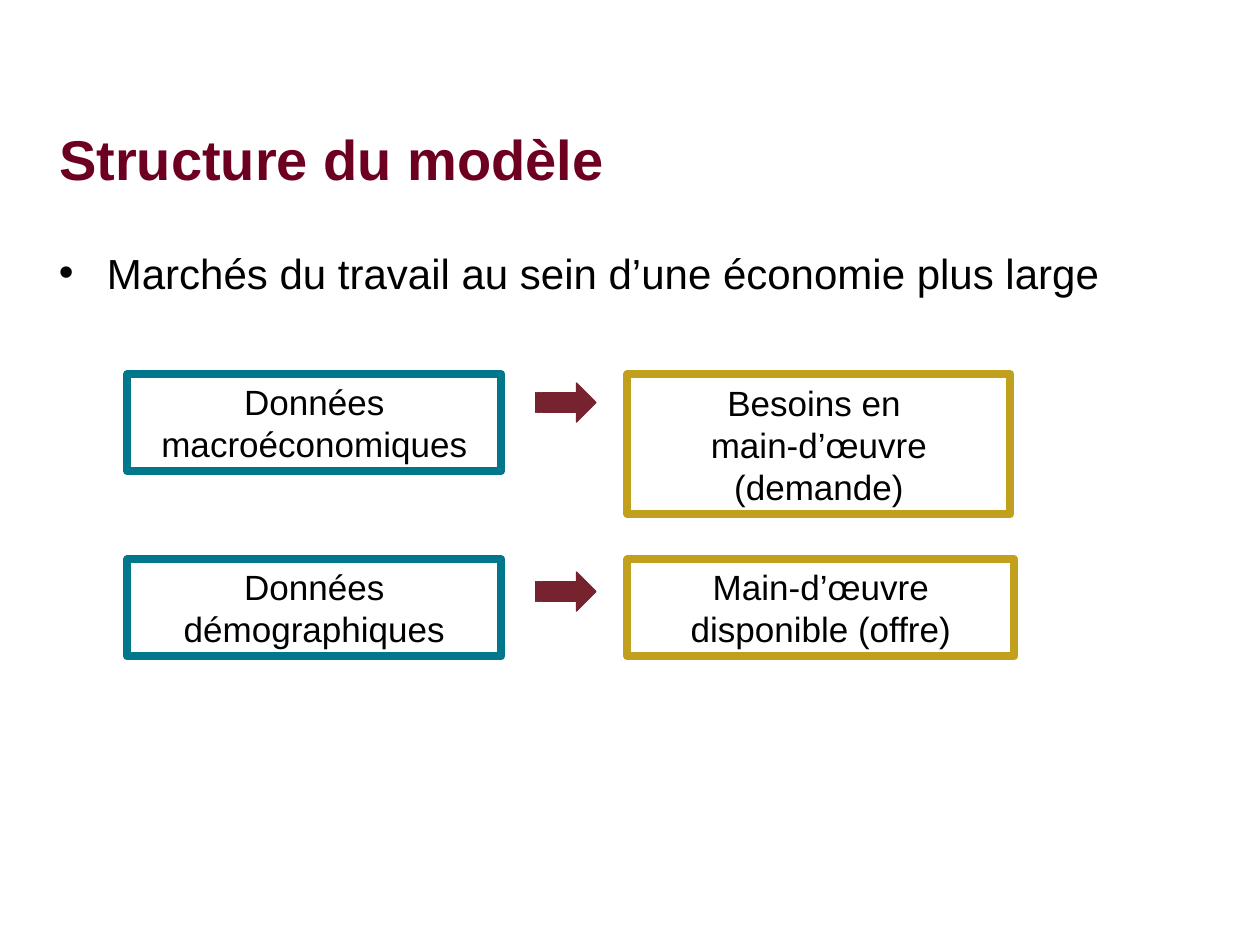
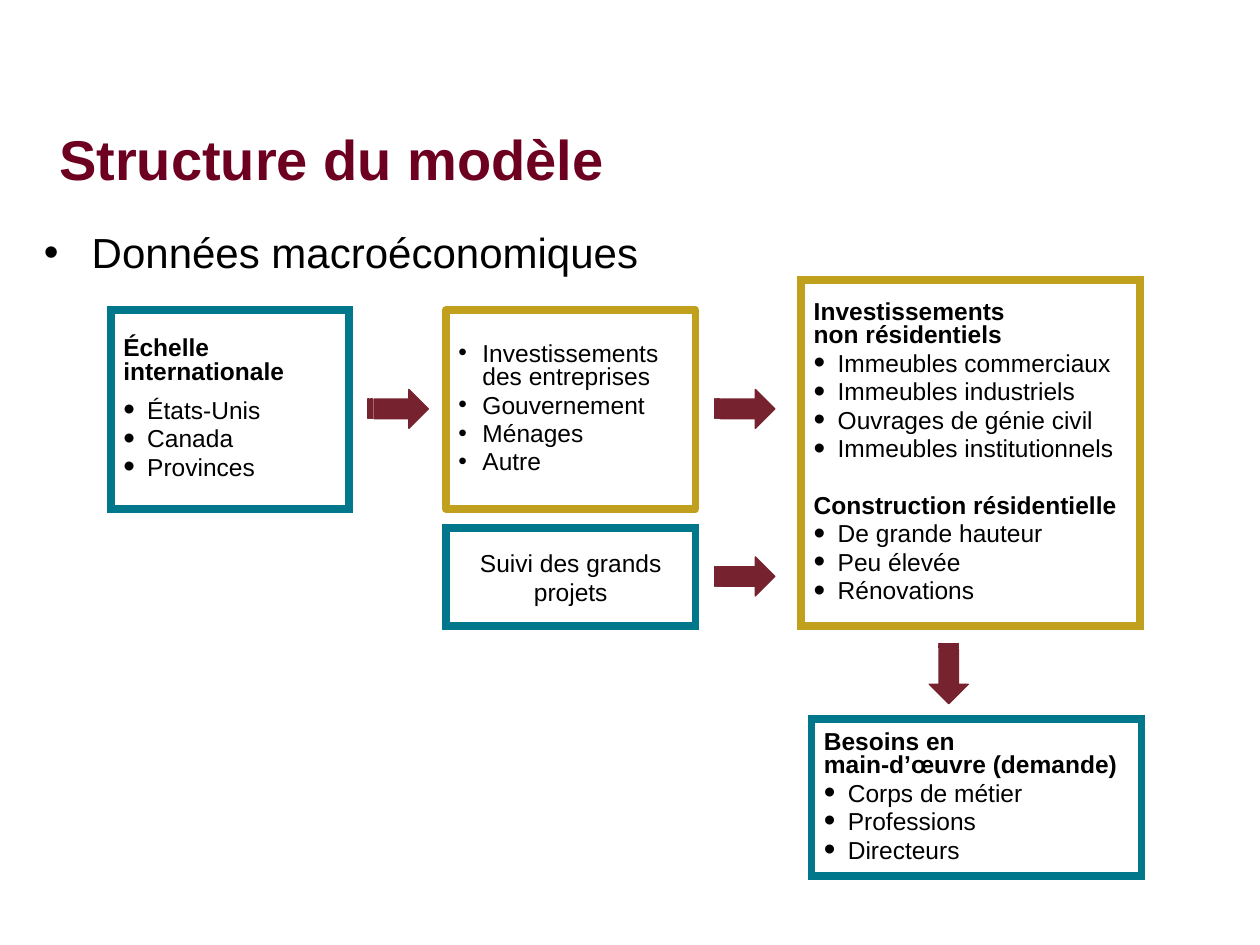
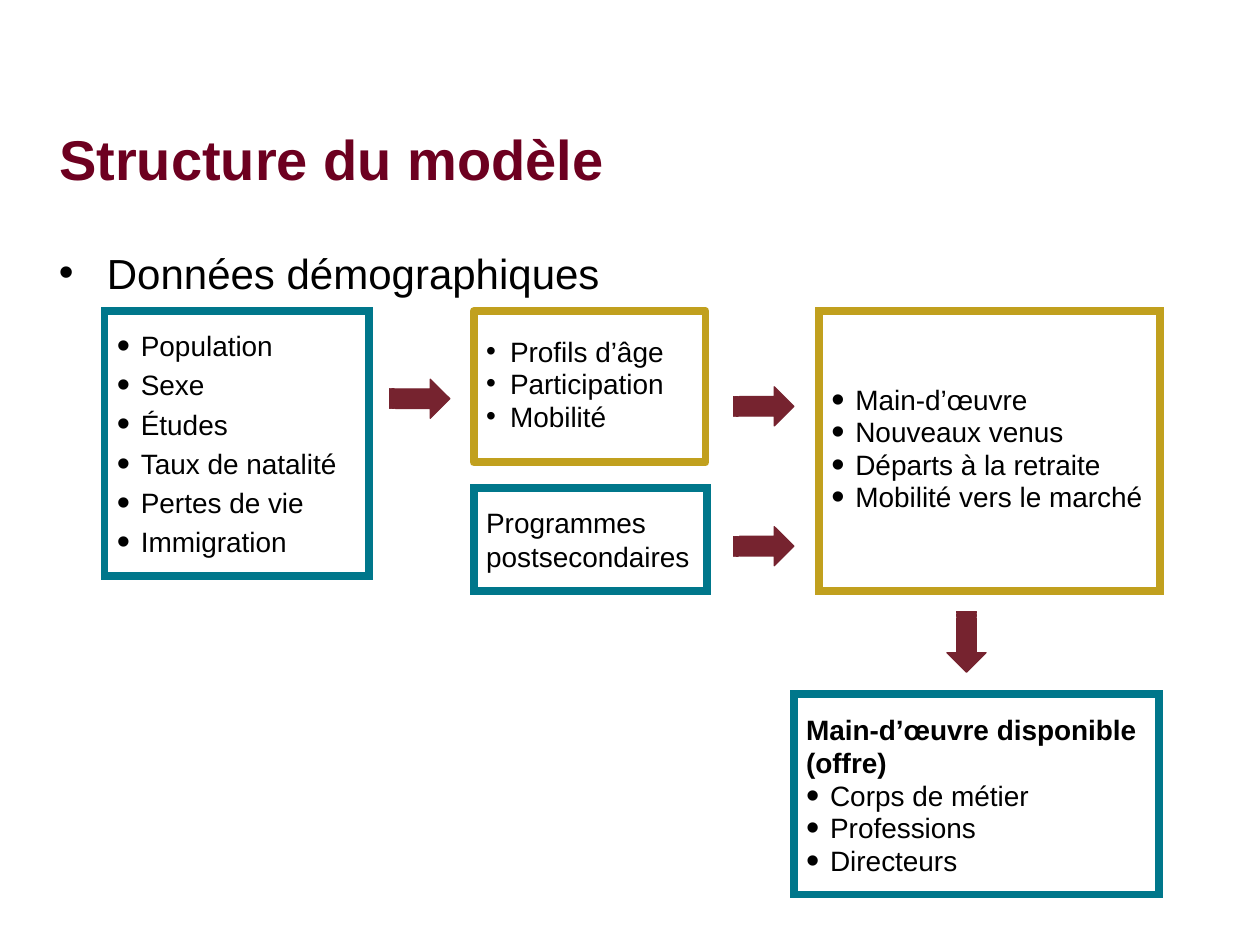
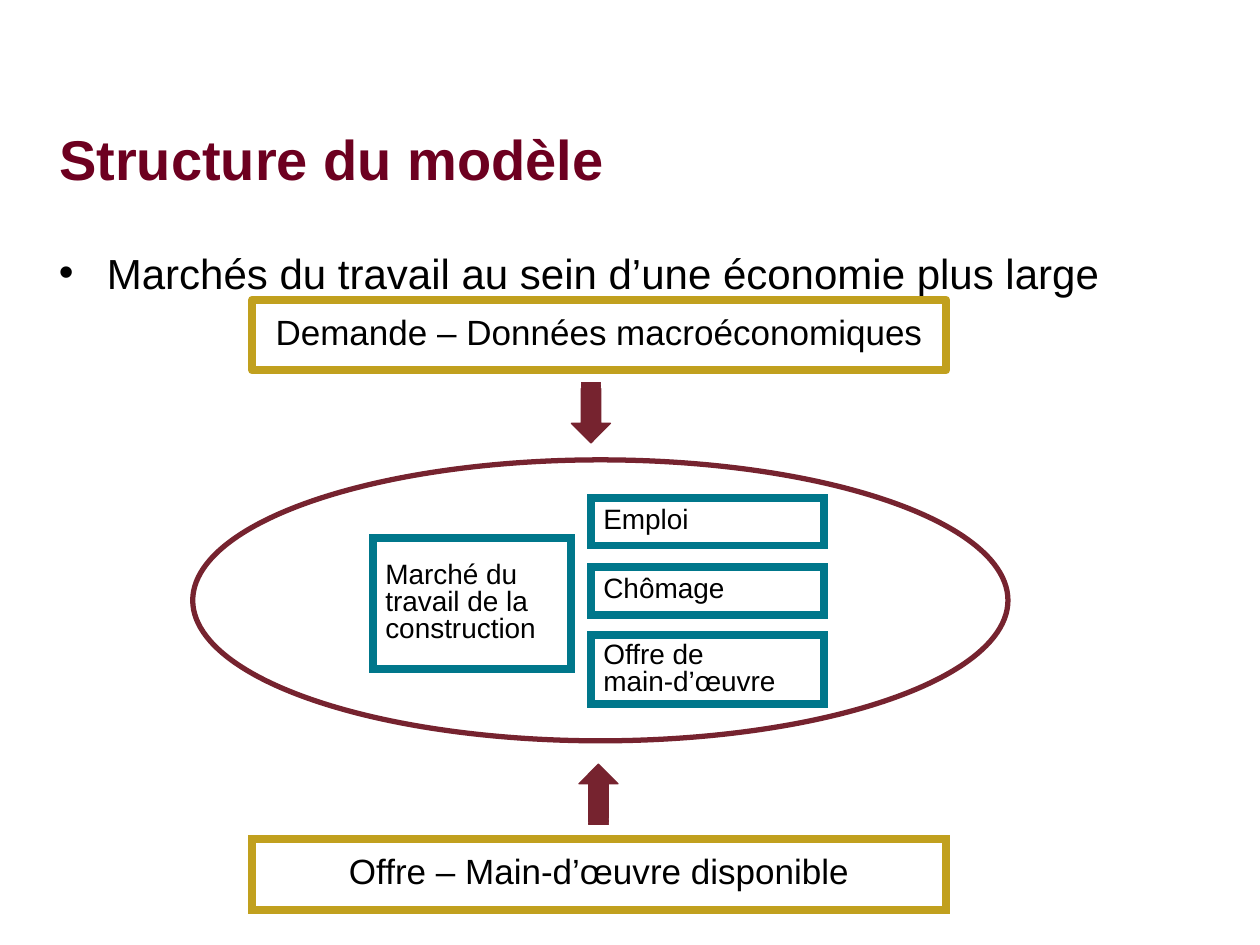
import dataclasses

import pptx
import pptx.dml.color
import pptx.enum.shapes
import pptx.enum.text
import pptx.oxml.ns
import pptx.util
from lxml import etree

Inches = pptx.util.Inches
Pt = pptx.util.Pt
Preset = pptx.enum.shapes.MSO_SHAPE
Align = pptx.enum.text.PP_ALIGN
Anchor = pptx.enum.text.MSO_ANCHOR

COLORS = {
    "title": "6D0020",
    "text": "000000",
    "teal": "00778B",
    "gold": "C1A01E",
    "maroon": "76232F",
    "white": "FFFFFF",
}
FONT = "Arial"
TITLE = "Structure du modèle"
ARROW_WIDTH, ARROW_HEIGHT = 0.48, 0.31
DOWN, UP = 90, 270
TIGHT = 0.8


@dataclasses.dataclass(frozen=True)
class Line:
    text: str
    bullet: int = 0
    bold: bool = False
    spacing: float = TIGHT
    before: float | None = None
    after: float = 0
    indent: float = 0.19


@dataclasses.dataclass(frozen=True)
class Box:
    left: float
    top: float
    width: float
    height: float
    color: str
    lines: list[Line]
    size: int
    centered: bool = False
    rounded: bool = False
    filled: bool = True


@dataclasses.dataclass(frozen=True)
class Arrow:
    left: float
    top: float
    rotation: int = 0


@dataclasses.dataclass(frozen=True)
class Ellipse:
    left: float
    top: float
    width: float
    height: float


@dataclasses.dataclass(frozen=True)
class Page:
    subtitle: str
    boxes: list[Box]
    arrows: list[Arrow]
    ellipses: list[Ellipse] = dataclasses.field(default_factory=list)
    subtitle_left: float = 0.37
    subtitle_top: float = 1.87


def rgb(name: str) -> pptx.dml.color.RGBColor:
    return pptx.dml.color.RGBColor.from_string(COLORS[name])


def bullets(*texts: str, percent: int = 135, spacing: float = TIGHT) -> list[Line]:
    return [Line(text, percent, spacing=spacing) for text in texts]


def add_bullet(paragraph, percent: int, indent: float) -> None:
    properties = paragraph._p.get_or_add_pPr()
    properties.set("marL", str(Inches(indent)))
    properties.set("indent", str(-Inches(indent)))
    for tag, key, value in (
        ("a:buSzPct", "val", str(percent * 1000)),
        ("a:buFont", "typeface", FONT),
        ("a:buChar", "char", "•"),
    ):
        etree.SubElement(properties, pptx.oxml.ns.qn(tag)).set(key, value)


def write_run(paragraph, text: str, size: int, color: str, bold: bool) -> None:
    run = paragraph.add_run()
    run.text = text
    run.font.name = FONT
    run.font.size = Pt(size)
    run.font.bold = bold
    run.font.color.rgb = rgb(color)


def write_lines(frame, lines: list[Line], size: int, align=Align.LEFT, color: str = "text") -> None:
    frame.word_wrap = True
    for index, line in enumerate(lines):
        paragraph = frame.add_paragraph() if index else frame.paragraphs[0]
        if line.bullet:
            add_bullet(paragraph, line.bullet, line.indent)
        paragraph.alignment = align
        paragraph.line_spacing = line.spacing
        before = 0.2 * size if line.before is None else line.before
        paragraph.space_before = Pt(before if index else 0)
        paragraph.space_after = Pt(line.after)
        for part_index, part in enumerate(line.text.split("\n")):
            if part_index:
                paragraph.add_line_break()
            write_run(paragraph, part, size, color, line.bold)


def add_outlined(slide, preset, item: Box | Ellipse, color: str, weight: float, filled: bool):
    shape = slide.shapes.add_shape(
        preset, Inches(item.left), Inches(item.top), Inches(item.width), Inches(item.height)
    )
    shape.shadow.inherit = False
    if filled:
        shape.fill.solid()
        shape.fill.fore_color.rgb = rgb("white")
    else:
        shape.fill.background()
    shape.line.color.rgb = rgb(color)
    shape.line.width = Pt(weight)
    return shape


def add_box(slide, box: Box) -> None:
    shape = add_outlined(slide, Preset.RECTANGLE, box, box.color, 4.5, box.filled)
    outline = shape.line._get_or_add_ln()
    if box.rounded:
        etree.SubElement(outline, pptx.oxml.ns.qn("a:round"))
    else:
        etree.SubElement(outline, pptx.oxml.ns.qn("a:miter")).set("lim", "800000")
    shape.text_frame.vertical_anchor = Anchor.MIDDLE
    write_lines(shape.text_frame, box.lines, box.size, Align.CENTER if box.centered else Align.LEFT)


def add_arrow(slide, arrow: Arrow) -> None:
    shape = slide.shapes.add_shape(
        Preset.STRIPED_RIGHT_ARROW,
        Inches(arrow.left), Inches(arrow.top), Inches(ARROW_WIDTH), Inches(ARROW_HEIGHT),
    )
    shape.shadow.inherit = False
    shape.fill.solid()
    shape.fill.fore_color.rgb = rgb("maroon")
    shape.line.color.rgb = rgb("maroon")
    shape.line.width = Pt(0.75)
    shape.rotation = arrow.rotation


def add_page(deck, page: Page) -> None:
    slide = deck.slides.add_slide(deck.slide_layouts[5])
    title = slide.shapes.title
    title.left, title.top = Inches(0.37), Inches(0.63)
    title.width, title.height = Inches(9), Inches(1.25)
    title.text_frame.vertical_anchor = Anchor.MIDDLE
    write_lines(title.text_frame, [Line(TITLE, bold=True, spacing=1)], 32, color="title")

    subtitle = slide.shapes.add_textbox(
        Inches(page.subtitle_left), Inches(page.subtitle_top), Inches(9), Inches(4.95)
    )
    subtitle.text_frame.margin_top = Inches(0.09)
    write_lines(subtitle.text_frame, [Line(page.subtitle, 100, spacing=1, indent=0.38)], 24)

    for ellipse in page.ellipses:
        add_outlined(slide, Preset.OVAL, ellipse, "maroon", 3, False)
    for box in page.boxes:
        add_box(slide, box)
    for arrow in page.arrows:
        add_arrow(slide, arrow)


def overview_box(left: float, top: float, width: float, height: float, color: str, *texts: str) -> Box:
    lines = [Line(text, spacing=1, before=0) for text in texts]
    return Box(left, top, width, height, color, lines, 20, centered=True, rounded=True, filled=False)


def market_box(left: float, top: float, width: float, height: float, text: str) -> Box:
    return Box(left, top, width, height, "teal", [Line(text)], 16)


def side_box(top: float, text: str, rounded: bool) -> Box:
    return Box(2, top, 5.51, 0.56, "gold", [Line(text)], 20, centered=True, rounded=rounded)


WIDER_ECONOMY = "Marchés du travail au sein d’une économie plus large"
WORKFORCE = bullets("Corps de métier", "Professions", "Directeurs")

OVERVIEW = Page(
    WIDER_ECONOMY,
    [
        overview_box(1.01, 2.97, 2.97, 0.77, "teal", "Données macroéconomiques"),
        overview_box(1.01, 4.44, 2.97, 0.77, "teal", "Données démographiques"),
        overview_box(4.98, 2.97, 3.04, 1.11, "gold", "Besoins en \nmain-d’œuvre", "(demande)"),
        overview_box(4.98, 4.44, 3.07, 0.77, "gold", "Main-d’œuvre disponible (offre)"),
    ],
    [Arrow(4.25, 3.04), Arrow(4.25, 4.54)],
)

MACROECONOMY = Page(
    "Données macroéconomiques",
    [
        Box(0.88, 2.46, 1.89, 1.58, "teal", [
            Line("Échelle internationale", bold=True, after=6),
            *bullets("États-Unis", "Canada", "Provinces"),
        ], 14),
        Box(3.54, 2.46, 1.98, 1.58, "gold", bullets(
            "Investissements des entreprises", "Gouvernement", "Ménages", "Autre", percent=100,
        ), 14, rounded=True),
        Box(6.36, 2.22, 2.69, 2.75, "gold", [
            Line("Investissements \nnon résidentiels", bold=True),
            *bullets(
                "Immeubles commerciaux", "Immeubles industriels",
                "Ouvrages de génie civil", "Immeubles institutionnels",
            ),
            Line("Construction résidentielle", bold=True, before=19),
            *bullets("De grande hauteur", "Peu élevée", "Rénovations"),
        ], 14),
        Box(3.54, 4.19, 1.98, 0.78, "teal", [
            Line("Suivi des grands projets", spacing=1),
        ], 14, centered=True),
        Box(6.44, 5.71, 2.62, 1.24, "teal", [
            Line("Besoins en \nmain-d’œuvre (demande)", bold=True), *WORKFORCE,
        ], 14),
    ],
    [Arrow(2.92, 3.09), Arrow(5.67, 3.09), Arrow(5.67, 4.42), Arrow(7.29, 5.19, DOWN)],
    subtitle_left=0.25,
    subtitle_top=1.71,
)

DEMOGRAPHY = Page(
    "Données démographiques",
    [
        Box(0.83, 2.47, 2.1, 2.1, "teal", bullets(
            "Population", "Sexe", "Études", "Taux de natalité", "Pertes de vie", "Immigration",
            spacing=1,
        ), 16),
        Box(3.76, 2.47, 1.84, 1.2, "gold", bullets(
            "Profils d’âge", "Participation", "Mobilité", percent=100,
        ), 16, rounded=True),
        Box(6.5, 2.47, 2.71, 2.22, "gold", bullets(
            "Main-d’œuvre", "Nouveaux venus", "Départs à la retraite", "Mobilité vers le marché",
        ), 16),
        Box(3.76, 3.87, 1.85, 0.82, "teal", [Line("Programmes postsecondaires", spacing=1)], 16),
        Box(6.3, 5.51, 2.9, 1.59, "teal", [
            Line("Main-d’œuvre disponible (offre)", bold=True, spacing=1), *WORKFORCE,
        ], 16),
    ],
    [Arrow(3.09, 3.01), Arrow(5.82, 3.07), Arrow(5.82, 4.18), Arrow(7.43, 4.94, DOWN)],
)

LABOUR_MARKET = Page(
    WIDER_ECONOMY,
    [
        side_box(2.38, "Demande – Données macroéconomiques", True),
        side_box(6.66, "Offre – Main-d’œuvre disponible", False),
        market_box(2.96, 4.27, 1.57, 1.04, "Marché du travail de la construction"),
        market_box(4.69, 3.95, 1.85, 0.38, "Emploi"),
        market_box(4.69, 4.5, 1.85, 0.38, "Chômage"),
        market_box(4.69, 5.04, 1.85, 0.55, "Offre de \nmain-d’œuvre"),
    ],
    [Arrow(4.45, 3.12, DOWN), Arrow(4.51, 6.15, UP)],
    [Ellipse(1.53, 3.65, 6.47, 2.23)],
)


def main() -> None:
    deck = pptx.Presentation()
    deck.slide_width, deck.slide_height = Inches(10), Inches(7.5)
    for page in (OVERVIEW, MACROECONOMY, DEMOGRAPHY, LABOUR_MARKET):
        add_page(deck, page)
    deck.save("out.pptx")


if __name__ == "__main__":
    main()
